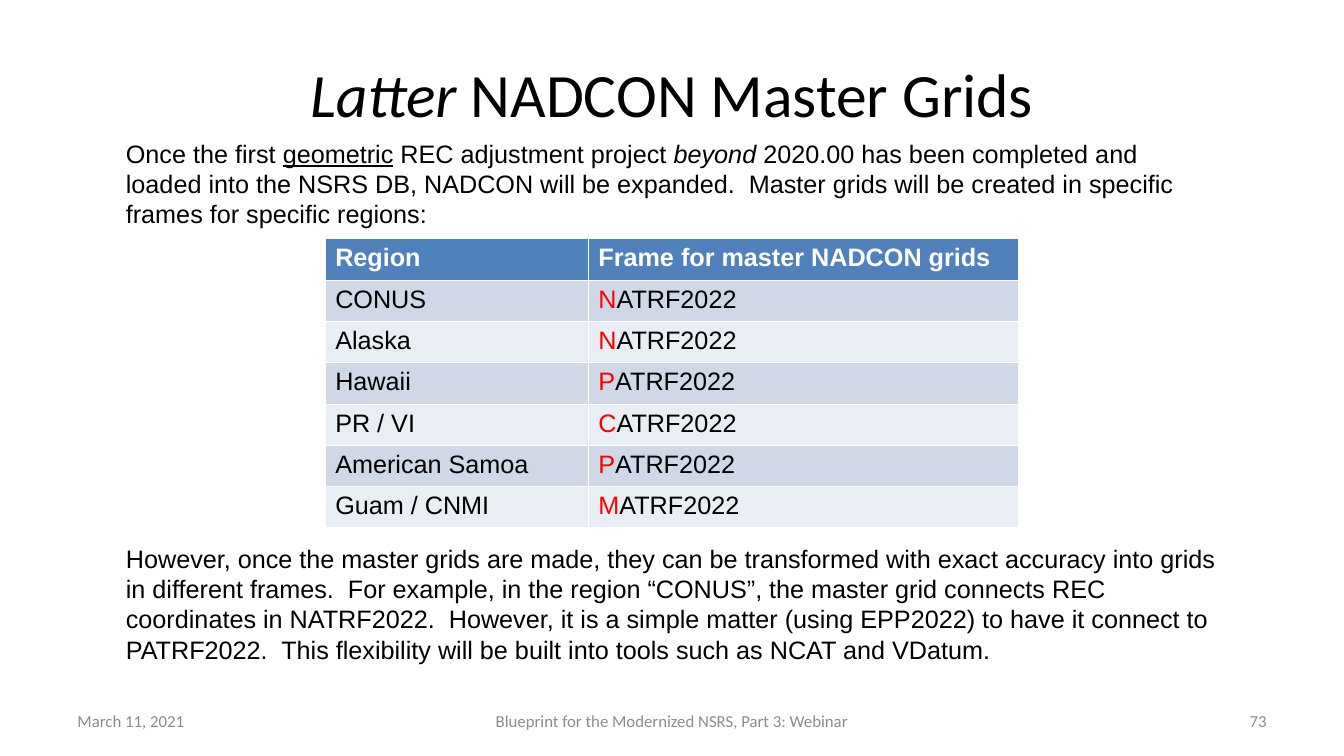
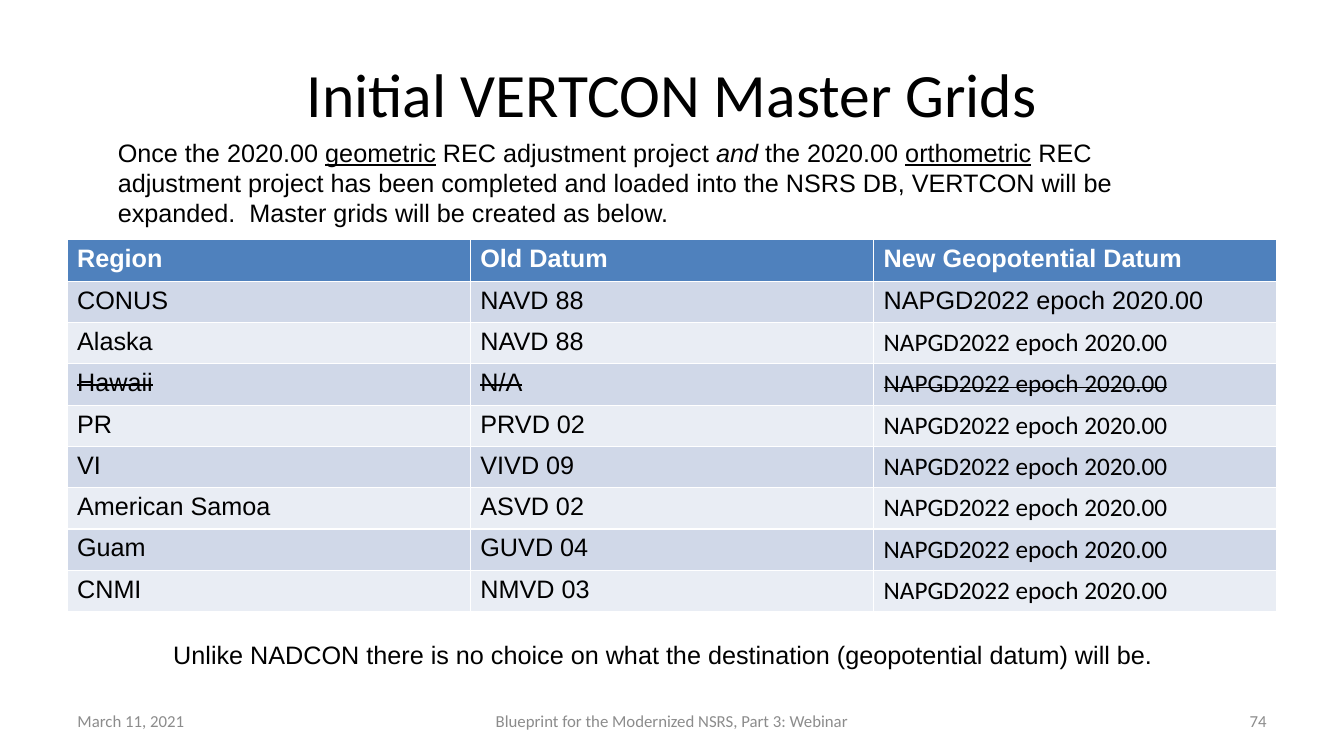
from pptx import Presentation
from pptx.dml.color import RGBColor
from pptx.enum.text import MSO_ANCHOR as Anchor, PP_ALIGN as Align
from pptx.util import Inches, Pt

WIDTH, HEIGHT = 13.33, 7.5
MARGIN = 0.67
ROW_HEIGHT = 0.41
COLORS = {"text": "000000", "accent": "FF0000", "footer": "8C8C8C",
          "header": "4F81BD", "header_text": "FFFFFF", "odd": "D0D8E8", "even": "E9EDF4"}
BODY_FONT, TITLE_FONT = "Arial", "Calibri"
DATE = "March 11, 2021"
EVENT = "Blueprint for the Modernized NSRS, Part 3: Webinar"

FRAMES = [("CONUS", "N"), ("Alaska", "N"), ("Hawaii", "P"), ("PR / VI", "C"),
          ("American Samoa", "P"), ("Guam / CNMI", "M")]
DATUMS = [("CONUS", "NAVD 88"), ("Alaska", "NAVD 88"), ("Hawaii", "N/A"), ("PR", "PRVD 02"),
          ("VI", "VIVD 09"), ("American Samoa", "ASVD 02"), ("Guam", "GUVD 04"), ("CNMI", "NMVD 03")]
NEW_DATUM = "NAPGD2022 epoch 2020.00"


def datum_row(region, datum):
    strike = {"strike": True} if datum == "N/A" else {}
    font = BODY_FONT if region == "CONUS" else TITLE_FONT
    return [[(region, strike)], [(datum, strike)], [(NEW_DATUM, {**strike, "font": font})]]


SLIDES = [
    {
        "number": 73,
        "title": [("Latter", {"italic": True}), " NADCON Master Grids"],
        "notes": [
            ((1.15, 1.32, 11.02, 1.01), [
                "Once the first ", ("geometric", {"underline": True}), " REC adjustment project ",
                ("beyond", {"italic": True}),
                " 2020.00 has been completed and loaded into the NSRS DB, NADCON will be expanded.  "
                "Master grids will be created in specific frames for specific regions:"]),
            ((1.15, 5.34, 11.02, 1.31), [
                "However, once the master grids are made, they can be transformed with exact accuracy "
                "into grids in different frames.  For example, in the region “CONUS”, the master grid "
                "connects REC coordinates in NATRF2022.  However, it is a simple matter (using EPP2022) "
                "to have it connect to PATRF2022.  This flexibility will be built into tools such as "
                "NCAT and VDatum."]),
        ],
        "table_top": 2.37,
        "columns": [2.61, 4.27],
        "header": ["Region", "Frame for master NADCON grids"],
        "rows": [[[region], [(letter, {"color": "accent"}), "ATRF2022"]] for region, letter in FRAMES],
    },
    {
        "number": 74,
        "title": ["Initial VERTCON Master Grids"],
        "notes": [
            ((1.07, 1.31, 11.02, 1.01), [
                "Once the 2020.00 ", ("geometric", {"underline": True}), " REC adjustment project ",
                ("and", {"italic": True}), " the 2020.00 ", ("orthometric", {"underline": True}),
                " REC adjustment project has been completed and loaded into the NSRS DB, VERTCON will "
                "be expanded.  Master grids will be created as below."]),
            ((1.62, 6.29, 9.93, 0.4), [
                "Unlike NADCON there is no choice on what the destination (geopotential datum) will be."]),
        ],
        "table_top": 2.38,
        "columns": [4, 4, 4],
        "header": ["Region", "Old Datum", "New Geopotential Datum"],
        "rows": [datum_row(*entry) for entry in DATUMS],
    },
]


def write(frame, spans, size=18, font=BODY_FONT, color="text", align=Align.LEFT, bold=False):
    para = frame.paragraphs[0]
    para.alignment = align
    for span in spans:
        text, style = span if isinstance(span, tuple) else (span, {})
        run = para.add_run()
        run.text = text
        run.font.size = Pt(size)
        run.font.name = style.get("font", font)
        run.font.color.rgb = RGBColor.from_string(COLORS[style.get("color", color)])
        run.font.bold = bold
        run.font.italic = style.get("italic", False)
        run.font.underline = style.get("underline", False)
        if style.get("strike"):
            run.font._element.set("strike", "sngStrike")


def add_text(page, place, spans, anchor=Anchor.TOP, **style):
    box = page.shapes.add_textbox(*map(Inches, place))
    box.text_frame.word_wrap = True
    box.text_frame.vertical_anchor = anchor
    write(box.text_frame, spans, **style)


def add_title(page, spans):
    title = page.shapes.title
    title.left, title.top = Inches(MARGIN), Inches(0.3)
    title.width, title.height = Inches(WIDTH - 2 * MARGIN), Inches(1.25)
    title.text_frame.vertical_anchor = Anchor.MIDDLE
    write(title.text_frame, spans, size=44, font=TITLE_FONT, align=Align.CENTER)


def add_footer(page, number):
    side, middle = 3.11, 4.22
    parts = [(MARGIN, side, DATE, Align.LEFT),
             ((WIDTH - middle) / 2, middle, EVENT, Align.CENTER),
             (WIDTH - MARGIN - side, side, str(number), Align.RIGHT)]
    for left, width, text, align in parts:
        add_text(page, (left, 6.95, width, 0.4), [text], anchor=Anchor.MIDDLE,
                 size=12, font=TITLE_FONT, color="footer", align=align)


def add_grid(page, top, columns, header, rows):
    lines = [[[name] for name in header]] + rows
    width = sum(columns)
    place = ((WIDTH - width) / 2, top, width, ROW_HEIGHT * len(lines))
    table = page.shapes.add_table(len(lines), len(columns), *map(Inches, place)).table
    for column, column_width in zip(table.columns, columns):
        column.width = Inches(column_width)
    for index, (row, line) in enumerate(zip(table.rows, lines)):
        row.height = Inches(ROW_HEIGHT)
        is_header = index == 0
        fill = "header" if is_header else ("odd" if index % 2 else "even")
        for cell, spans in zip(row.cells, line):
            cell.fill.solid()
            cell.fill.fore_color.rgb = RGBColor.from_string(COLORS[fill])
            write(cell.text_frame, spans, bold=is_header,
                  color="header_text" if is_header else "text")


def main():
    deck = Presentation()
    deck.slide_width, deck.slide_height = Inches(WIDTH), Inches(HEIGHT)
    for content in SLIDES:
        page = deck.slides.add_slide(deck.slide_layouts[5])
        add_title(page, content["title"])
        add_grid(page, content["table_top"], content["columns"], content["header"], content["rows"])
        add_footer(page, content["number"])
        for place, spans in content["notes"]:
            add_text(page, place, spans)
    deck.save("out.pptx")


if __name__ == "__main__":
    main()
